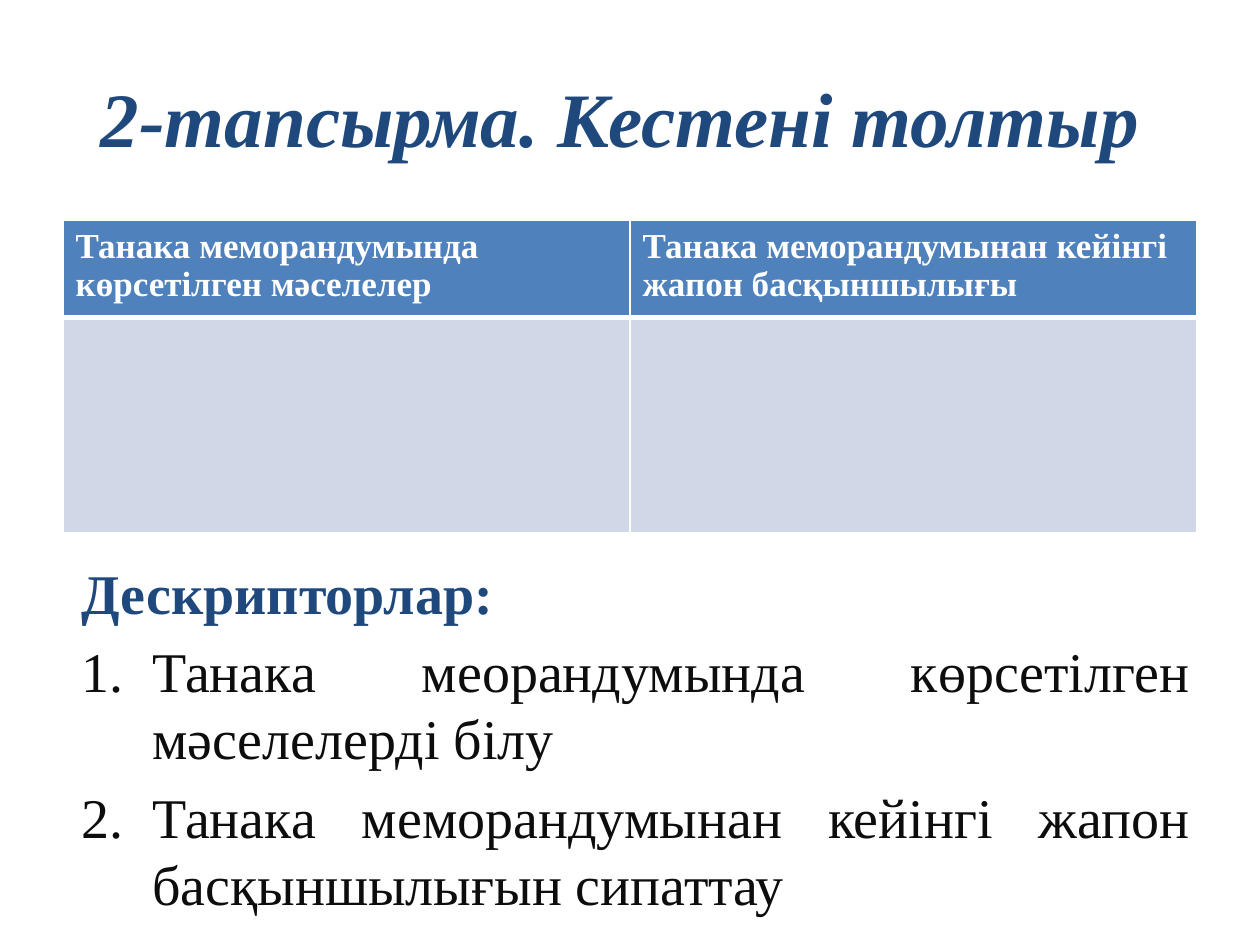
from pptx import Presentation
from pptx.dml.color import RGBColor
from pptx.enum.text import MSO_ANCHOR, PP_ALIGN
from pptx.oxml.ns import qn
from pptx.util import Inches, Pt
from lxml import etree

MIDDLE, TOP = MSO_ANCHOR.MIDDLE, MSO_ANCHOR.TOP
LEFT, CENTER, JUSTIFY = PP_ALIGN.LEFT, PP_ALIGN.CENTER, PP_ALIGN.JUSTIFY
NAVY = RGBColor(0x1F, 0x49, 0x7D)
INK = RGBColor(0x0D, 0x0D, 0x0D)
WHITE = RGBColor(0xFF, 0xFF, 0xFF)
BLUE = RGBColor(0x4F, 0x81, 0xBD)
PALE = RGBColor(0xD0, 0xD8, 0xE8)

TITLE = "2-тапсырма. Кестені толтыр "
HEADING = "Дескрипторлар:"
DESCRIPTORS = [
    "Танака меорандумында көрсетілген мәселелерді білу",
    "Танака меморандумынан кейінгі жапон басқыншылығын сипаттау",
]
ROWS = [
    ["Танака меморандумында көрсетілген мәселелер",
     "Танака меморандумынан кейінгі жапон басқыншылығы"],
    ["", ""],
]
ROW_HEIGHTS = [0.71, 1.71]
ROW_FILLS = [BLUE, PALE]
BOTTOM_BORDERS = [3, 1]

TITLE_FONT = {"size": Pt(44), "bold": True, "italic": True}
HEADING_FONT = {"size": Pt(32), "bold": True}
ITEM_FONT = {"size": Pt(32), "bold": False}
HEADER_FONT = {"size": Pt(20), "bold": True}


def add_run(p, text, color, font):
    r = p.add_run()
    r.text = text
    r.font.name = "Times New Roman"
    r.font.color.rgb = color
    for name, value in font.items():
        setattr(r.font, name, value)


def add_box(s, left, top, width, height, anchor):
    tf = s.shapes.add_textbox(*map(Inches, (left, top, width, height))).text_frame
    tf.word_wrap = True
    tf.vertical_anchor = anchor
    return tf


def number(p, indent):
    pPr = p._p.get_or_add_pPr()
    pPr.set("marL", str(Inches(indent)))
    pPr.set("indent", str(-Inches(indent)))
    etree.SubElement(pPr, qn("a:buFont"), typeface="+mj-lt")
    etree.SubElement(pPr, qn("a:buAutoNum"), type="arabicPeriod")


def set_borders(cell, bottom):
    tcPr = cell._tc.get_or_add_tcPr()
    for i, (side, width) in enumerate((("L", 1), ("R", 1), ("T", 1), ("B", bottom))):
        ln = etree.Element(qn(f"a:ln{side}"), w=str(Pt(width)))
        fill = etree.SubElement(ln, qn("a:solidFill"))
        etree.SubElement(fill, qn("a:srgbClr"), val=str(WHITE))
        tcPr.insert(i, ln)


prs = Presentation()
prs.slide_width, prs.slide_height = Inches(10), Inches(7.5)
s = prs.slides.add_slide(prs.slide_layouts[6])

p = add_box(s, 0.5, 0.3, 9, 1.25, MIDDLE).paragraphs[0]
p.alignment = CENTER
add_run(p, TITLE, NAVY, TITLE_FONT)

tf = add_box(s, 0.55, 4.38, 9, 2.72, TOP)
p = tf.paragraphs[0]
p.alignment = LEFT
add_run(p, HEADING, NAVY, HEADING_FONT)
for text in DESCRIPTORS:
    p = tf.add_paragraph()
    p.alignment = JUSTIFY
    p.space_before = Pt(6.4)
    number(p, 0.56)
    add_run(p, text, INK, ITEM_FONT)

table = s.shapes.add_table(len(ROWS), 2, Inches(0.5), Inches(1.75),
                           Inches(9), Inches(sum(ROW_HEIGHTS))).table
for i, texts in enumerate(ROWS):
    table.rows[i].height = Inches(ROW_HEIGHTS[i])
    for j, text in enumerate(texts):
        cell = table.cell(i, j)
        cell.fill.solid()
        cell.fill.fore_color.rgb = ROW_FILLS[i]
        set_borders(cell, BOTTOM_BORDERS[i])
        if text:
            add_run(cell.text_frame.paragraphs[0], text, WHITE, HEADER_FONT)

prs.save("out.pptx")
